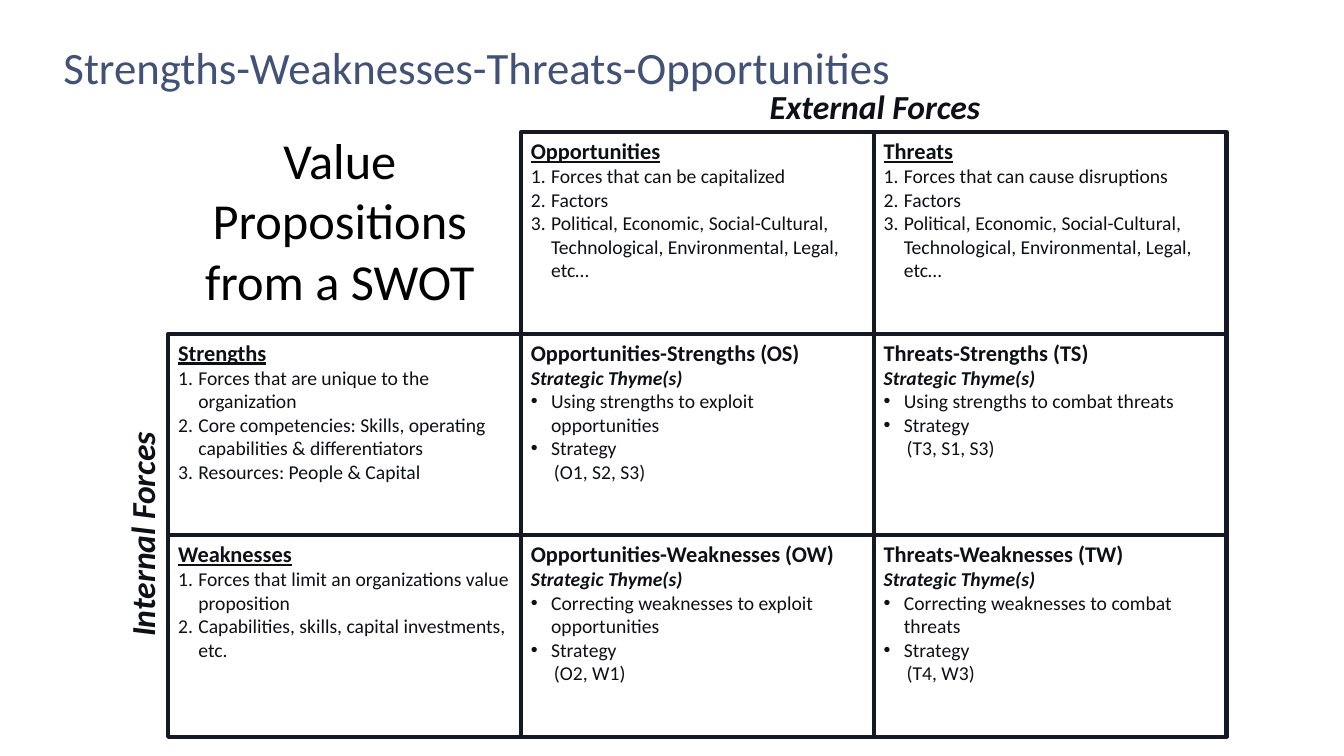
"""Build a SWOT matrix slide with external and internal forces."""
from lxml.etree import SubElement
from pptx import Presentation
from pptx.dml.color import RGBColor
from pptx.enum.shapes import MSO_SHAPE as Shape
from pptx.enum.text import MSO_ANCHOR as Anchor, PP_ALIGN as Align
from pptx.oxml.ns import qn
from pptx.util import Cm, Pt

LEFT, TOP, WIDTH, HEIGHT = 4.24, 3.33, 8.89, 5.08
INK, BORDER = "0E1018", "141924"
HEADING = {"size": Pt(16), "bold": True}
BODY = {"size": Pt(14), "bold": False}
THEME = {"size": Pt(14), "bold": True, "italic": True}
AXIS = {"size": Pt(24), "bold": True, "italic": True}
FACTORS = ["Factors", "Political, Economic, Social-Cultural, Technological, Environmental, Legal, etc…"]


def color(hex_value):
    return RGBColor.from_string(hex_value)


def write(paragraph, text, font_format, ink=INK):
    run = paragraph.add_run()
    run.text = text
    run.font.color.rgb = color(ink)
    for name, value in {"name": "Calibri", **font_format}.items():
        setattr(run.font, name, value)


deck = Presentation()
deck.slide_width, deck.slide_height = Cm(33.87), Cm(19.05)
slide = deck.slides.add_slide(deck.slide_layouts[6])

forces = [
    (0, 1, "Strengths", ["Forces that are unique to the organization",
                         "Core competencies: Skills, operating capabilities & differentiators",
                         "Resources: People & Capital"]),
    (0, 2, "Weaknesses", ["Forces that limit an organizations value proposition",
                          "Capabilities, skills, capital investments, etc."]),
    (1, 0, "Opportunities", ["Forces that can be capitalized", *FACTORS]),
    (2, 0, "Threats", ["Forces that can cause disruptions", *FACTORS]),
]
strategies = [
    (1, 1, "Opportunities-Strengths (OS)", "Using strengths to exploit opportunities", "(O1, S2, S3)"),
    (2, 1, "Threats-Strengths (TS)", "Using strengths to combat threats", "(T3, S1, S3)"),
    (1, 2, "Opportunities-Weaknesses (OW)", "Correcting weaknesses to exploit opportunities", "(O2, W1)"),
    (2, 2, "Threats-Weaknesses (TW)", "Correcting weaknesses to combat threats", "(T4, W3)"),
]

quadrants = []
for column, row, heading, points in forces:
    lines = [("plain", heading, {**HEADING, "underline": True})]
    lines += [("number", point, BODY) for point in points]
    quadrants.append((column, row, lines))
for column, row, heading, approach, sources in strategies:
    quadrants.append((column, row, [
        ("plain", heading, HEADING), ("plain", "Strategic Thyme(s)", THEME),
        ("bullet", approach, BODY), ("bullet", "Strategy", BODY), ("sources", sources, BODY)]))

for column, row, lines in quadrants:
    quadrant = slide.shapes.add_shape(Shape.RECTANGLE, Cm(LEFT + column * WIDTH),
                                      Cm(TOP + row * HEIGHT), Cm(WIDTH), Cm(HEIGHT))
    quadrant.shadow.inherit = False
    quadrant.fill.background()
    quadrant.line.color.rgb = color(BORDER)
    quadrant.line.width = Pt(3)
    frame = quadrant.text_frame
    frame.word_wrap = True
    frame.vertical_anchor = Anchor.TOP
    for index, (kind, text, font_format) in enumerate(lines):
        paragraph = frame.add_paragraph() if index else frame.paragraphs[0]
        paragraph.alignment = Align.LEFT
        properties = paragraph._p.get_or_add_pPr()
        if kind == "sources":
            properties.set("marL", str(Cm(0.58)))
        elif kind != "plain":
            properties.set("marL", str(Cm(0.51)))
            properties.set("indent", str(Cm(-0.51)))
            if kind == "number":
                SubElement(properties, qn("a:buAutoNum"), type="arabicPeriod")
            else:
                SubElement(properties, qn("a:buFont"), typeface="Arial")
                SubElement(properties, qn("a:buChar"), char="•")
        write(paragraph, text, font_format)

labels = [
    ("Strengths-Weaknesses-Threats-Opportunities", (1.35, 0.81, 31.14, 1.68), 0,
     {"size": Pt(32)}, "425176", Align.LEFT, Anchor.BOTTOM),
    ("External Forces", (13.16, 2.03, 17.78, 1.27), 0, AXIS, INK, Align.CENTER, Anchor.TOP),
    ("Internal Forces", (-1.52, 12.83, 10.19, 1.27), 270, AXIS, INK, Align.CENTER, Anchor.TOP),
    ("Value Propositions from a SWOT", (4.22, 3.12, 8.69, 4.88), 0,
     {"size": Pt(36)}, "000000", Align.CENTER, Anchor.TOP),
]
for text, bounds, rotation, font_format, ink, alignment, anchor in labels:
    label = slide.shapes.add_textbox(*map(Cm, bounds))
    label.rotation = rotation
    label.text_frame.word_wrap = True
    label.text_frame.vertical_anchor = anchor
    label.text_frame.paragraphs[0].alignment = alignment
    write(label.text_frame.paragraphs[0], text, font_format, ink)

deck.save("out.pptx")
